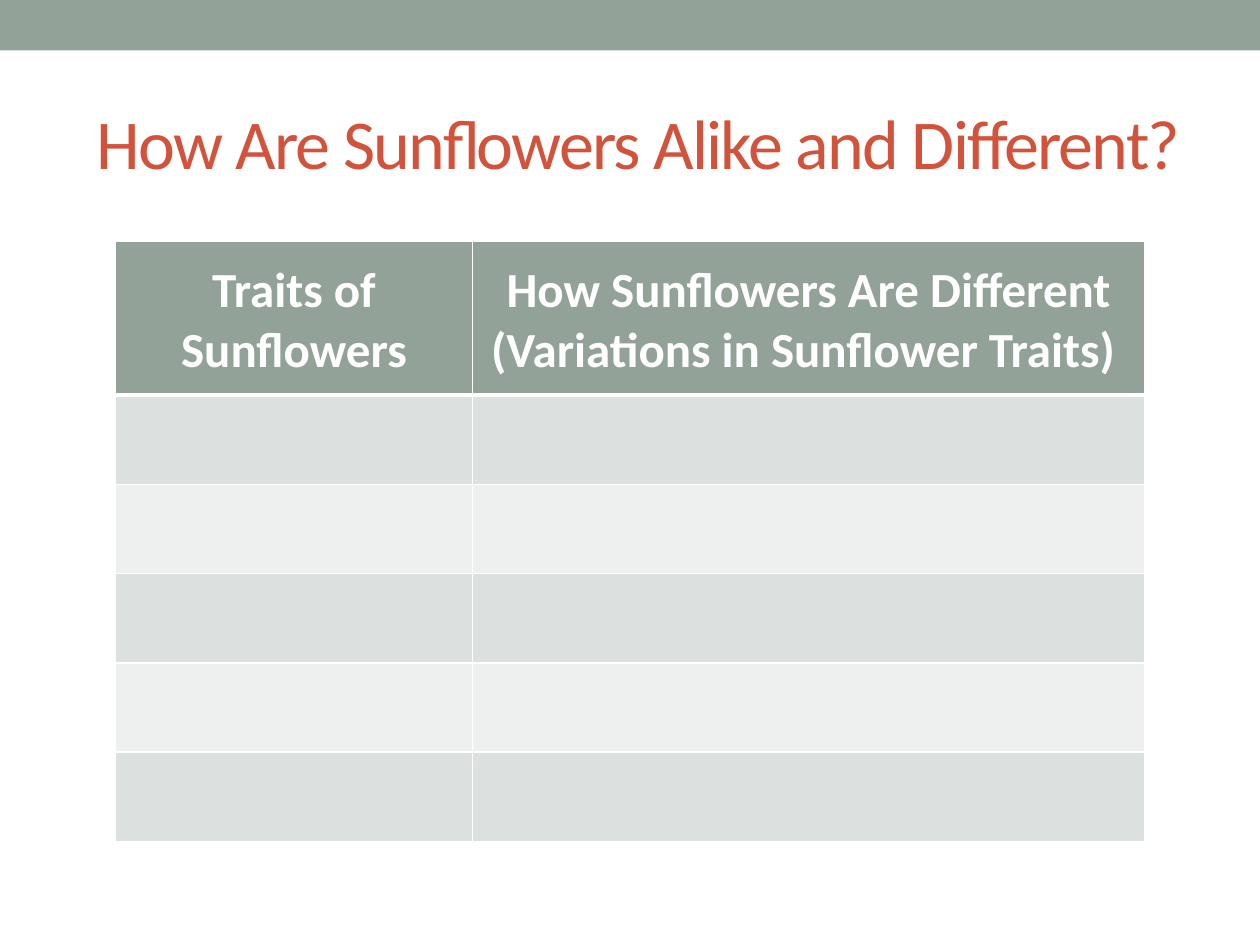
from lxml import etree
from pptx import Presentation
from pptx.dml.color import RGBColor
from pptx.enum.shapes import MSO_SHAPE
from pptx.enum.text import MSO_ANCHOR, MSO_AUTO_SIZE, PP_ALIGN
from pptx.oxml.ns import qn
from pptx.util import Pt

RECTANGLE = MSO_SHAPE.RECTANGLE
LEFT, CENTER = PP_ALIGN.LEFT, PP_ALIGN.CENTER
MIDDLE = MSO_ANCHOR.MIDDLE
NO_AUTOFIT = MSO_AUTO_SIZE.NONE

SAGE = RGBColor(0x93, 0xA2, 0x99)
RUST = RGBColor(0xD2, 0x53, 0x3C)
DARK_BAND = RGBColor(0xDC, 0xE0, 0xDE)
LIGHT_BAND = RGBColor(0xEE, 0xF0, 0xEF)
WHITE = RGBColor(0xFF, 0xFF, 0xFF)

HEADERS = [
    "Traits of Sunflowers",
    "How Sunflowers Are Different\n(Variations in Sunflower Traits) ",
]
COLUMN_WIDTHS = [204, 384]
HEADER_HEIGHT, ROW_HEIGHT = 87.8, 51
TRAIT_ROWS = 5


class SlideBuilder:
    def __init__(self, slide, font="Calibri"):
        self.slide = slide
        self.font = font

    def style(self, paragraph, size, color, align, bold=False):
        paragraph.alignment = align
        for span in paragraph.runs:
            span.font.name = self.font
            span.font.size = Pt(size)
            span.font.bold = bold
            span.font.color.rgb = color

    def bar(self, left, top, width, height, color):
        shape = self.slide.shapes.add_shape(
            RECTANGLE, Pt(left), Pt(top), Pt(width), Pt(height))
        shape.shadow.inherit = False
        shape.fill.solid()
        shape.fill.fore_color.rgb = color
        shape.line.fill.background()

    def title(self, text, left, top, width, height):
        title = self.slide.shapes.title
        title.left, title.top = Pt(left), Pt(top)
        title.width, title.height = Pt(width), Pt(height)
        frame = title.text_frame
        frame.text = text
        frame.word_wrap = True
        frame.auto_size = NO_AUTOFIT
        frame.vertical_anchor = MIDDLE
        paragraph = frame.paragraphs[0]
        self.style(paragraph, 40, RUST, LEFT)
        for span in paragraph.runs:
            span.font._element.set("spc", "-100")

    def borders(self, cell, **widths):
        """Draw white borders; keys are the sides L, R, T and B, in that order."""
        properties = cell._tc.get_or_add_tcPr()
        for side, width in widths.items():
            line = etree.SubElement(properties, qn(f"a:ln{side}"), w=str(Pt(width)))
            fill = etree.SubElement(line, qn("a:solidFill"))
            etree.SubElement(fill, qn("a:srgbClr"), val=str(WHITE))

    def table(self, left, top):
        height = HEADER_HEIGHT + TRAIT_ROWS * ROW_HEIGHT
        table = self.slide.shapes.add_table(
            TRAIT_ROWS + 1, len(HEADERS), Pt(left), Pt(top),
            Pt(sum(COLUMN_WIDTHS)), Pt(height)).table
        for column, width in zip(table.columns, COLUMN_WIDTHS):
            column.width = Pt(width)
        for index, row in enumerate(table.rows):
            row.height = Pt(ROW_HEIGHT if index else HEADER_HEIGHT)
            band = DARK_BAND if index % 2 else LIGHT_BAND
            for cell in row.cells:
                self.borders(cell, L=1, R=1, T=3 if index == 1 else 1,
                             B=1 if index else 3)
                cell.fill.solid()
                cell.fill.fore_color.rgb = band if index else SAGE
        for cell, text in zip(table.rows[0].cells, HEADERS):
            cell.margin_top = Pt(11)
            cell.text_frame.text = text
            for paragraph in cell.text_frame.paragraphs:
                self.style(paragraph, 28, WHITE, CENTER, bold=True)


def main():
    deck = Presentation()
    deck.slide_width, deck.slide_height = Pt(720), Pt(540)
    page = SlideBuilder(deck.slides.add_slide(deck.slide_layouts[5]))
    page.bar(0, 0, 720, 28.8, SAGE)
    page.title("How Are Sunflowers Alike and Different?", 48, 42, 636, 78)
    page.table(66, 138)
    deck.save("out.pptx")


if __name__ == "__main__":
    main()
